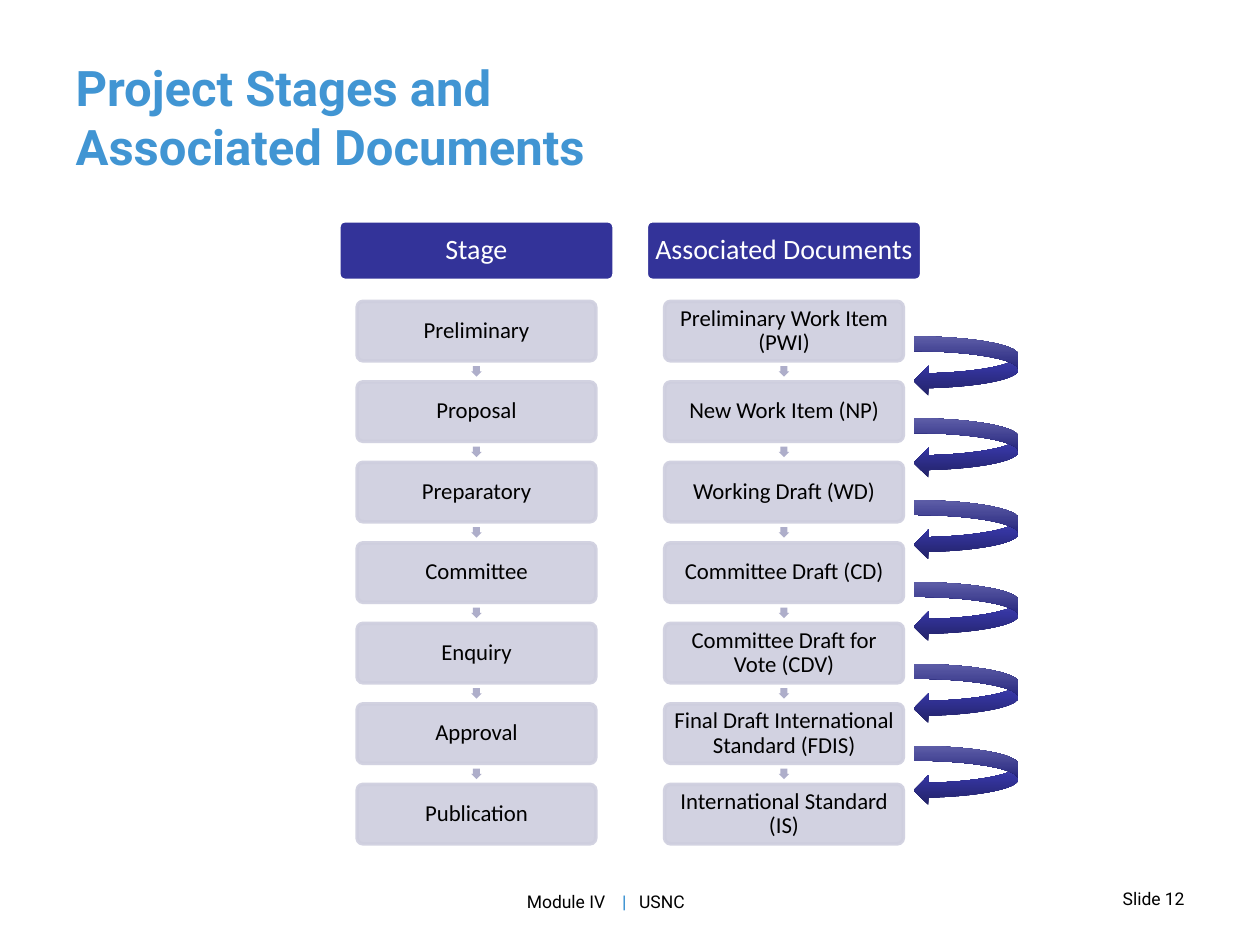
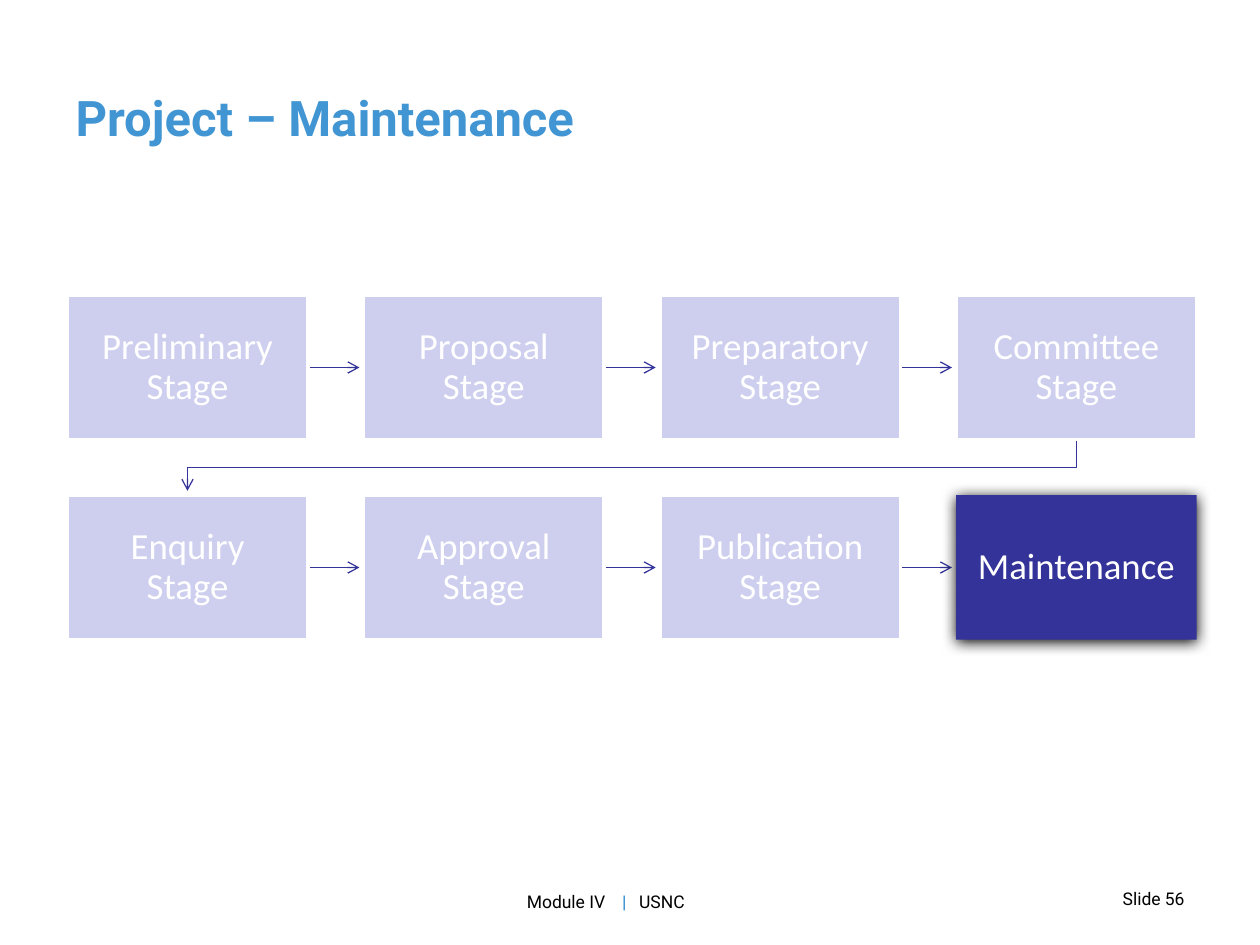
from lxml.etree import SubElement
from pptx import Presentation
from pptx.dml.color import RGBColor
from pptx.enum.shapes import MSO_CONNECTOR, MSO_SHAPE
from pptx.enum.text import MSO_ANCHOR, MSO_AUTO_SIZE, PP_ALIGN
from pptx.oxml.ns import qn
from pptx.util import Pt

COLORS = {
    "title": "4195D3", "navy": "333399", "node": "CECEDE", "step": "AEAECA",
    "faded": "CECEEF", "white": "FFFFFF", "black": "000000",
    "dark": "222267", "mid": "3535A0", "light": "7575D1",
}
STAGES = ["Preliminary", "Proposal", "Preparatory", "Committee",
          "Enquiry", "Approval", "Publication"]
DOCUMENTS = ["Preliminary Work Item (PWI)", "New Work Item (NP)",
             "Working Draft (WD)", "Committee Draft (CD)",
             "Committee Draft for Vote (CDV)",
             "Final Draft International Standard (FDIS)",
             "International Standard (IS)"]


def rgb(name):
    return RGBColor.from_string(COLORS[name])


def add(parent, tag, **attrs):
    return SubElement(parent, qn(tag), {k: str(v) for k, v in attrs.items()})


def write(tf, text, size=10, font="Roboto", color="black", bold=False,
          align=PP_ALIGN.LEFT, anchor=MSO_ANCHOR.TOP, inset=None,
          spacing=None, tabs=()):
    """Fill a frame with one paragraph; text is a string or (text, format) runs."""
    tf.word_wrap = True
    tf.auto_size = MSO_AUTO_SIZE.NONE
    tf.vertical_anchor = anchor
    if inset is not None:
        tf.margin_left = tf.margin_right = Pt(inset)
        tf.margin_top = tf.margin_bottom = Pt(inset)
    p = tf.paragraphs[0]
    p.alignment = align
    if spacing:
        p.line_spacing = spacing
    if tabs:
        stops = add(p._p.get_or_add_pPr(), "a:tabLst")
        for tab in tabs:
            add(stops, "a:tab", pos=Pt(tab), algn="l")
    for part, fmt in [(text, {})] if isinstance(text, str) else text:
        for i, line in enumerate(part.split("\n")):
            if i:
                p.add_line_break()
            r = p.add_run()
            r.text = line
            r.font.size, r.font.name = Pt(size), font
            r.font.bold = fmt.get("bold", bold)
            r.font.color.rgb = rgb(fmt.get("color", color))


class Deck:
    def __init__(self):
        self.prs = Presentation()
        self.prs.slide_width, self.prs.slide_height = Pt(720), Pt(540)
        self.s = None

    def slide(self, title, number):
        self.s = self.prs.slides.add_slide(self.prs.slide_layouts[5])
        self.textbox([("Module IV\t", {}), ("|", {"color": "title", "bold": True}),
                      ("\tUSNC", {})], 294, 505.5, 174, 32, tabs=(54.4, 64.2))
        sp = self.s.shapes.title
        sp.left, sp.top, sp.width, sp.height = Pt(36), Pt(21.6), Pt(648), Pt(90)
        write(sp.text_frame, title, size=28, color="title", bold=True,
              anchor=MSO_ANCHOR.MIDDLE)
        self.textbox(f"Slide {number}", 606, 504, 78, 24, align=PP_ALIGN.RIGHT)

    def textbox(self, text, x, y, w, h, **fmt):
        sp = self.s.shapes.add_textbox(Pt(x), Pt(y), Pt(w), Pt(h))
        write(sp.text_frame, text, **fmt)

    def shape(self, kind, x, y, w, h, fill, line=None, adj=(), alpha=None):
        sp = self.s.shapes.add_shape(kind, Pt(x), Pt(y), Pt(w), Pt(h))
        sp.shadow.inherit = False
        for i, value in enumerate(adj):
            sp.adjustments[i] = value
        sp.fill.solid()
        sp.fill.fore_color.rgb = rgb(fill)
        if line:
            sp.line.color.rgb, sp.line.width = rgb(line), Pt(2)
        else:
            sp.line.fill.background()
        if alpha:
            for color in sp.element.spPr.iter(qn("a:srgbClr")):
                add(color, "a:alpha", val=alpha * 1000)
        return sp

    def label(self, sp, text, size, color="white", inset=1.44):
        write(sp.text_frame, text, size=size, font="Calibri", color=color,
              align=PP_ALIGN.CENTER, anchor=MSO_ANCHOR.MIDDLE, inset=inset,
              spacing=0.9)

    def stage_column(self, x, heading, items):
        top, pitch, w, h, step = 126.2, 46, 157.2, 34, 6
        node_w = 136.4
        center = x + w / 2
        sp = self.shape(MSO_SHAPE.ROUNDED_RECTANGLE, x, top, w, h, "navy",
                        "white", adj=[0.1])
        self.label(sp, heading, 16)
        for i, item in enumerate(items, 1):
            y = top + i * pitch
            if i > 1:
                self.shape(MSO_SHAPE.DOWN_ARROW, center - step / 2,
                           y - (pitch - h + step) / 2, step, step, "step",
                           adj=[0.667, 0.5])
            sp = self.shape(MSO_SHAPE.ROUNDED_RECTANGLE, center - node_w / 2, y,
                            node_w, h, "node", "node", adj=[0.1], alpha=90)
            self.label(sp, item, 13, "black")

    def return_arrow(self, x, y):
        sp = self.shape(MSO_SHAPE.CURVED_LEFT_ARROW, x, y, 60, 34, "mid")
        sp.fill.gradient()
        sp.fill.gradient_angle = 90
        stops = sp.element.spPr.find(qn("a:gradFill")).find(qn("a:gsLst"))
        stops.clear()
        for pos, name in ((0, "dark"), (48, "mid"), (100, "light")):
            add(add(stops, "a:gs", pos=pos * 1000), "a:srgbClr", val=COLORS[name])

    def arrow(self, *points):
        """Draw a thin arrow through the points."""
        (x, y), *rest = [(Pt(a), Pt(b)) for a, b in points]
        if len(rest) == 1:
            sp = self.s.shapes.add_connector(MSO_CONNECTOR.STRAIGHT, x, y, *rest[0])
        else:
            builder = self.s.shapes.build_freeform(x, y)
            builder.add_line_segments(rest, close=False)
            sp = builder.convert_to_shape()
            sp.fill.background()
        sp.line.color.rgb, sp.line.width = rgb("navy"), Pt(0.75)
        add(sp.element.spPr.find(qn("a:ln")), "a:tailEnd", type="arrow")
        add(sp.element.spPr, "a:effectLst")

    def stage_box(self, x, y, w, h, text, current):
        sp = self.shape(MSO_SHAPE.RECTANGLE, x, y, w, h,
                        "navy" if current else "faded", None if current else "white")
        if current:
            shadow = add(sp.element.spPr.find(qn("a:effectLst")), "a:outerShdw",
                         blurRad=Pt(8.5), dist=Pt(1), dir=90 * 60000, rotWithShape=0)
            add(shadow, "a:srgbClr", val=COLORS["black"])
        self.label(sp, text, 21, inset=11.5)


def stages_and_documents(deck):
    deck.slide("Project Stages and\nAssociated Documents", 12)
    deck.stage_column(193.7, "Stage", STAGES)
    deck.stage_column(369.4, "Associated Documents", DOCUMENTS)
    for i in range(len(STAGES) - 1):
        deck.return_arrow(522, 192.2 + 46.8 * i)


def maintenance(deck):
    deck.slide("Project – Maintenance", 56)
    left, top, w, h, dx, dy, columns = 38.4, 168.7, 137.5, 82.6, 169.3, 114.3, 4
    names = [f"{stage} Stage" for stage in STAGES] + ["Maintenance"]
    for i, name in enumerate(names):
        row, col = divmod(i, columns)
        x, y = left + col * dx, top + row * dy
        if col < columns - 1:
            deck.arrow((x + w, y + h / 2), (x + w + 29.5, y + h / 2))
        elif i < len(names) - 1:
            center, first, bottom = x + w / 2, left + w / 2, y + h
            turn = y + (h + dy) / 2
            deck.arrow((center, bottom), (center, turn), (first, turn),
                       (first, y + dy - 2.5))
        deck.stage_box(x, y, w, h, name, current=i == len(names) - 1)


def main():
    deck = Deck()
    stages_and_documents(deck)
    maintenance(deck)
    deck.prs.save("out.pptx")


if __name__ == "__main__":
    main()
